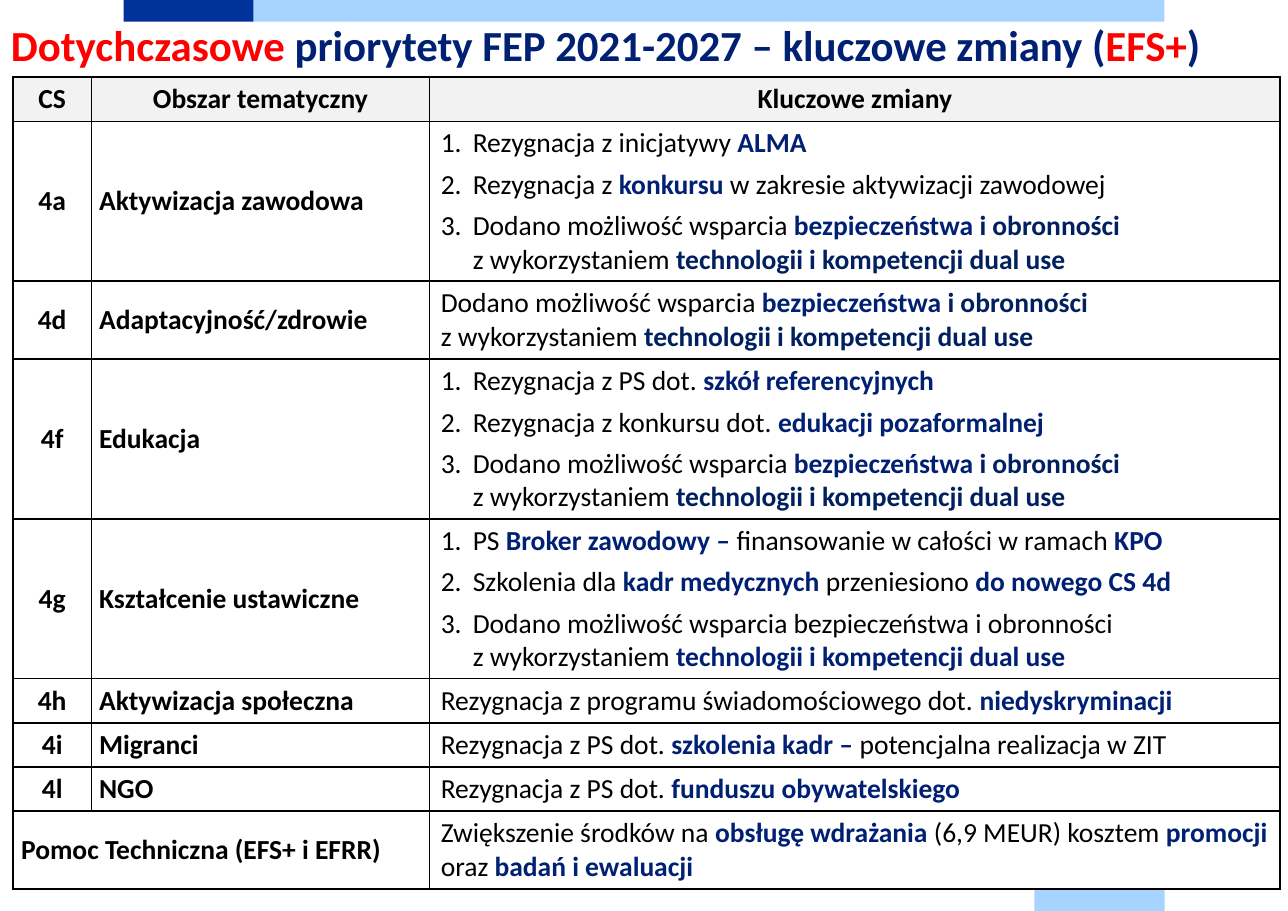
from lxml import etree
from pptx import Presentation
from pptx.dml.color import RGBColor
from pptx.enum.shapes import MSO_SHAPE
from pptx.enum.text import MSO_ANCHOR, PP_ALIGN
from pptx.oxml.ns import qn
from pptx.util import Pt

RECTANGLE = MSO_SHAPE.RECTANGLE
MIDDLE = MSO_ANCHOR.MIDDLE
LEFT, CENTER = PP_ALIGN.LEFT, PP_ALIGN.CENTER
COLORS = {"ink": "000000", "navy": "002073", "deep": "002060", "red": "FF0000",
          "blue": "003399", "sky": "A6D3FF", "header": "F2F2F2"}
NUMBER_INDENT = Pt(20.9)


def write(paragraph, text, size=18, color="ink", bold=False):
    for index, line in enumerate(text.split("\n")):
        if index:
            paragraph.add_line_break()
        run = paragraph.add_run()
        run.text = line
        run.font.name = "Calibri"
        run.font.size = Pt(size)
        run.font.bold = bold
        run.font.color.rgb = RGBColor.from_string(COLORS[color])


def format_cell(cell, side, vertical, fill=None):
    cell.vertical_anchor = MIDDLE
    cell.margin_left = cell.margin_right = Pt(side)
    cell.margin_top = cell.margin_bottom = Pt(vertical)
    properties = cell._tc.get_or_add_tcPr()
    for edge in ("a:lnL", "a:lnR", "a:lnT", "a:lnB"):
        border = etree.SubElement(properties, qn(edge), w=str(Pt(1)))
        solid = etree.SubElement(border, qn("a:solidFill"))
        etree.SubElement(solid, qn("a:srgbClr"), val=COLORS["ink"])
    if fill:
        cell.fill.solid()
        cell.fill.fore_color.rgb = RGBColor.from_string(COLORS[fill])
    else:
        cell.fill.background()


presentation = Presentation()
presentation.slide_width = Pt(841.68)
presentation.slide_height = Pt(595.44)
slide = presentation.slides.add_slide(presentation.slide_layouts[6])

for left, top, width, color in [(80.8, 0, 85, "blue"), (165.8, 0, 595.2, "sky"),
                                (676, 581.3, 85, "sky")]:
    bar = slide.shapes.add_shape(RECTANGLE, Pt(left), Pt(top), Pt(width), Pt(14.2))
    bar.shadow.inherit = False
    bar.fill.solid()
    bar.fill.fore_color.rgb = RGBColor.from_string(COLORS[color])
    bar.line.fill.background()

title = slide.shapes.add_textbox(Pt(7.2), Pt(12.2), Pt(825.8), Pt(40.3)).text_frame
title.word_wrap = True
title.margin_left = title.margin_right = title.margin_top = title.margin_bottom = 0
title.paragraphs[0].line_spacing = Pt(33.9)
for text, color in [("Dotychczasowe", "red"),
                    (" priorytety FEP 2021-2027 – kluczowe zmiany (", "navy"),
                    ("EFS+", "red"), (")", "navy")]:
    write(title.paragraphs[0], text, size=28, color=color, bold=True)

dual_use = [("Dodano możliwość wsparcia ", "ink"), ("bezpieczeństwa ", "navy"),
            ("i obronności \n", "deep"), ("z wykorzystaniem ", "ink"),
            ("technologii i kompetencji dual use", "deep")]
priorities = [
    ("4a", "Aktywizacja zawodowa", [
        [("Rezygnacja z inicjatywy ", "ink"), ("ALMA", "navy")],
        [("Rezygnacja z ", "ink"), ("konkursu", "navy"),
         (" w zakresie aktywizacji zawodowej", "ink")],
        dual_use]),
    ("4d", "Adaptacyjność/zdrowie", [dual_use]),
    ("4f", "Edukacja", [
        [("Rezygnacja z PS dot. ", "ink"), ("szkół referencyjnych", "navy")],
        [("Rezygnacja z konkursu dot. ", "ink"), ("edukacji pozaformalnej", "navy")],
        dual_use]),
    ("4g", "Kształcenie ustawiczne", [
        [("PS ", "ink"), ("Broker zawodowy – ", "navy"),
         ("finansowanie w całości w ramach ", "ink"), ("KPO", "navy")],
        [("Szkolenia dla ", "ink"), ("kadr medycznych ", "navy"),
         ("przeniesiono ", "ink"), ("do nowego CS 4d", "navy")],
        [("Dodano możliwość wsparcia bezpieczeństwa i obronności \nz wykorzystaniem ", "ink"),
         ("technologii i kompetencji dual use", "navy")]]),
    ("4h", "Aktywizacja społeczna", [
        [("Rezygnacja z programu świadomościowego dot. ", "ink"),
         ("niedyskryminacji", "navy")]]),
    ("4i", "Migranci", [
        [("Rezygnacja z PS dot. ", "ink"), ("szkolenia kadr – ", "navy"),
         ("potencjalna realizacja w ZIT", "ink")]]),
    ("4l", "NGO", [
        [("Rezygnacja z PS dot. ", "ink"), ("funduszu obywatelskiego", "navy")]]),
    ("Pomoc Techniczna (EFS+ i EFRR)", "", [
        [("Zwiększenie środków na ", "ink"), ("obsługę wdrażania ", "navy"),
         ("(6,9 MEUR) kosztem", "ink"), (" promocji ", "navy"),
         ("oraz", "ink"), (" badań i ewaluacji", "navy")]]),
]

row_heights = [28.75, 104.5, 51, 104.5, 104.5, 28.75, 28.75, 28.75, 51]
column_widths = [51, 221.3, 555.7]
table = slide.shapes.add_table(len(row_heights), len(column_widths), Pt(8.6), Pt(50.4),
                               Pt(sum(column_widths)), Pt(sum(row_heights))).table
table.first_row = table.horz_banding = False
for row, height in zip(table.rows, row_heights):
    row.height = Pt(height)
for column, width in zip(table.columns, column_widths):
    column.width = Pt(width)

for column, heading in enumerate(["CS", "Obszar tematyczny", "Kluczowe zmiany"]):
    cell = table.cell(0, column)
    format_cell(cell, 7.2, 3.6, fill="header")
    paragraph = cell.text_frame.paragraphs[0]
    paragraph.alignment = CENTER
    paragraph.space_after = Pt(5)
    write(paragraph, heading, bold=True)

for row, (code, area, changes) in enumerate(priorities, start=1):
    for column, label in enumerate([code, area]):
        cell = table.cell(row, column)
        format_cell(cell, 5.2, 0)
        if label:
            paragraph = cell.text_frame.paragraphs[0]
            paragraph.alignment = CENTER if column == 0 and area else LEFT
            paragraph.space_after = Pt(5)
            write(paragraph, label, bold=True)
    if not area:
        table.cell(row, 0).merge(table.cell(row, 1))

    cell = table.cell(row, 2)
    format_cell(cell, 7.2, 3.6)
    frame = cell.text_frame
    for index, change in enumerate(changes):
        paragraph = frame.add_paragraph() if index else frame.paragraphs[0]
        paragraph.space_after = Pt(5)
        if len(changes) > 1:
            properties = paragraph._p.get_or_add_pPr()
            properties.set("marL", str(NUMBER_INDENT))
            properties.set("indent", str(-NUMBER_INDENT))
            etree.SubElement(properties, qn("a:buFont"), typeface="+mj-lt")
            etree.SubElement(properties, qn("a:buAutoNum"), type="arabicPeriod")
        for text, color in change:
            write(paragraph, text, color=color, bold=color != "ink")

presentation.save("out.pptx")
